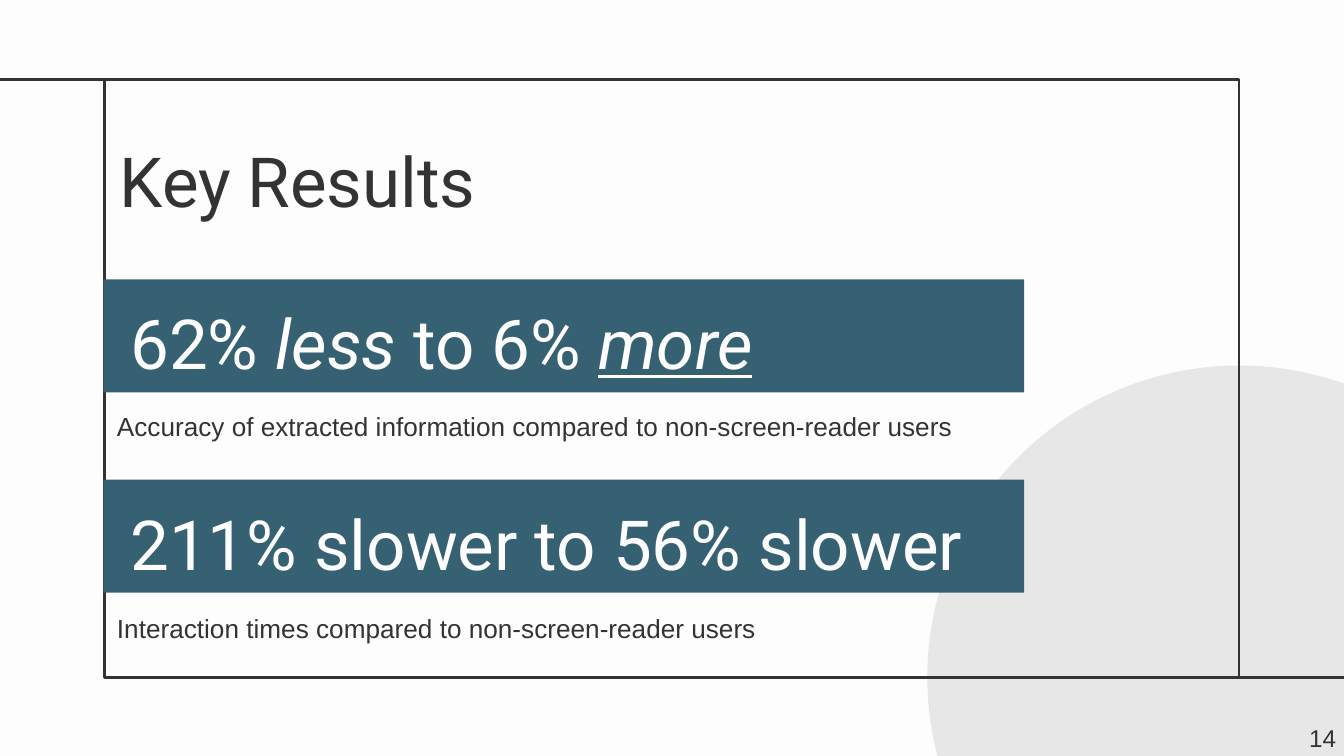
from lxml.etree import SubElement
from pptx import Presentation
from pptx.dml.color import RGBColor
from pptx.enum.shapes import MSO_CONNECTOR, MSO_SHAPE
from pptx.enum.text import MSO_ANCHOR, MSO_AUTO_SIZE, PP_ALIGN
from pptx.oxml.ns import qn
from pptx.util import Inches, Pt

PAPER = RGBColor(0xFD, 0xFD, 0xFD)
INK = RGBColor(0x33, 0x33, 0x33)
TEAL = RGBColor(0x36, 0x61, 0x73)
GREY = RGBColor(0xE8, 0xE7, 0xE7)

RESULTS = [
    ([("62% ", ""), ("less", "i"), (" to 6% ", ""), ("more", "iu")],
     "Accuracy of extracted information compared to non-screen-reader users"),
    ([("211% slower to 56% slower", "")],
     "Interaction times compared to non-screen-reader users"),
]
CAPTION_INDEXES = (1, 3)
UNUSED_INDEXES = (2, 4)


def place(box, left, top, width, height):
    """Move and size a box, given in inches."""
    box.left, box.top = Inches(left), Inches(top)
    box.width, box.height = Inches(width), Inches(height)


def write(box, spans, font, size, color, anchor=MSO_ANCHOR.TOP,
          align=PP_ALIGN.LEFT, side=0.1, spacing=1.15):
    """Fill a box with one paragraph of (text, style) spans."""
    frame = box.text_frame
    frame.word_wrap = True
    frame.auto_size = MSO_AUTO_SIZE.NONE
    frame.vertical_anchor = anchor
    frame.margin_left = frame.margin_right = Inches(side)
    frame.margin_top = frame.margin_bottom = Inches(0.1)
    para = frame.paragraphs[0]
    para.alignment = align
    para.line_spacing = spacing
    para.space_before = Pt(0)
    para.font.name, para.font.size = font, Pt(size)
    para.font.bold = False
    para.font.color.rgb = color
    for text, style in spans:
        span = para.add_run()
        span.text = text
        if "i" in style:
            span.font.italic = True
        if "u" in style:
            span.font.underline = True


def add_block(page, kind, left, top, width, height, fill=None, line=None):
    """Add a flat shape with an optional fill and outline."""
    block = page.shapes.add_shape(
        kind, Inches(left), Inches(top), Inches(width), Inches(height))
    block.shadow.inherit = False
    if fill is None:
        block.fill.background()
    else:
        block.fill.solid()
        block.fill.fore_color.rgb = fill
    if line is None:
        block.line.fill.background()
    else:
        block.line.color.rgb = line
        block.line.width = Pt(1.5)
    return block


def add_rule(page, start, end, top):
    """Add a horizontal frame line."""
    rule = page.shapes.add_connector(
        MSO_CONNECTOR.STRAIGHT, Inches(start), Inches(top), Inches(end), Inches(top))
    rule.line.color.rgb = INK
    rule.line.width = Pt(1.5)
    SubElement(rule.element.spPr, qn("a:effectLst"))


def add_backdrop(page):
    """Draw the background, the circle and the frame with its two rules."""
    page.background.fill.solid()
    page.background.fill.fore_color.rgb = PAPER
    add_block(page, MSO_SHAPE.OVAL, 6.9, 2.72, 4.64, 4.64, fill=GREY)
    add_block(page, MSO_SHAPE.RECTANGLE, 0.78, 0.59, 8.44, 4.45, line=INK)
    add_rule(page, 9.19, 10, 5.04)
    add_rule(page, 0.79, 0, 0.59)


def add_result(page, row, spans, caption, caption_box):
    """Add a highlighted result with its caption below."""
    band = add_block(page, MSO_SHAPE.RECTANGLE,
                     0.77, 2.08 + row * 1.49, 6.85, 0.84, fill=TEAL)
    write(band, spans, "Roboto", 37, PAPER, MSO_ANCHOR.MIDDLE, side=0.2)
    place(caption_box, 0.77, 2.92 + row * 1.5, 6.74, 0.45)
    write(caption_box, [(caption, "")], "Arial", 14, INK)


def add_page_number(page, number):
    """Add the page number in the lower right corner."""
    box = page.shapes.add_textbox(
        Inches(9.44), Inches(5.28), Inches(0.6), Inches(0.43))
    write(box, [(number, "")], "Arial", 13, INK, align=PP_ALIGN.RIGHT, spacing=1.0)


def main():
    """Build the deck and save it."""
    deck = Presentation()
    deck.slide_width, deck.slide_height = Inches(10), Inches(10 * 9 / 16)
    page = deck.slides.add_slide(deck.slide_layouts.get_by_name("Comparison"))
    holders = {holder.placeholder_format.idx: holder for holder in page.placeholders}
    for index in UNUSED_INDEXES:
        unused = holders[index].element
        unused.getparent().remove(unused)

    add_backdrop(page)
    title = page.shapes.title
    place(title, 0.79, 0.98, 8.43, 0.63)
    write(title, [("Key Results", "")], "Roboto", 37, INK, MSO_ANCHOR.MIDDLE)
    for row, (spans, caption) in enumerate(RESULTS):
        add_result(page, row, spans, caption, holders[CAPTION_INDEXES[row]])
    add_page_number(page, "14")
    deck.save("out.pptx")


if __name__ == "__main__":
    main()
